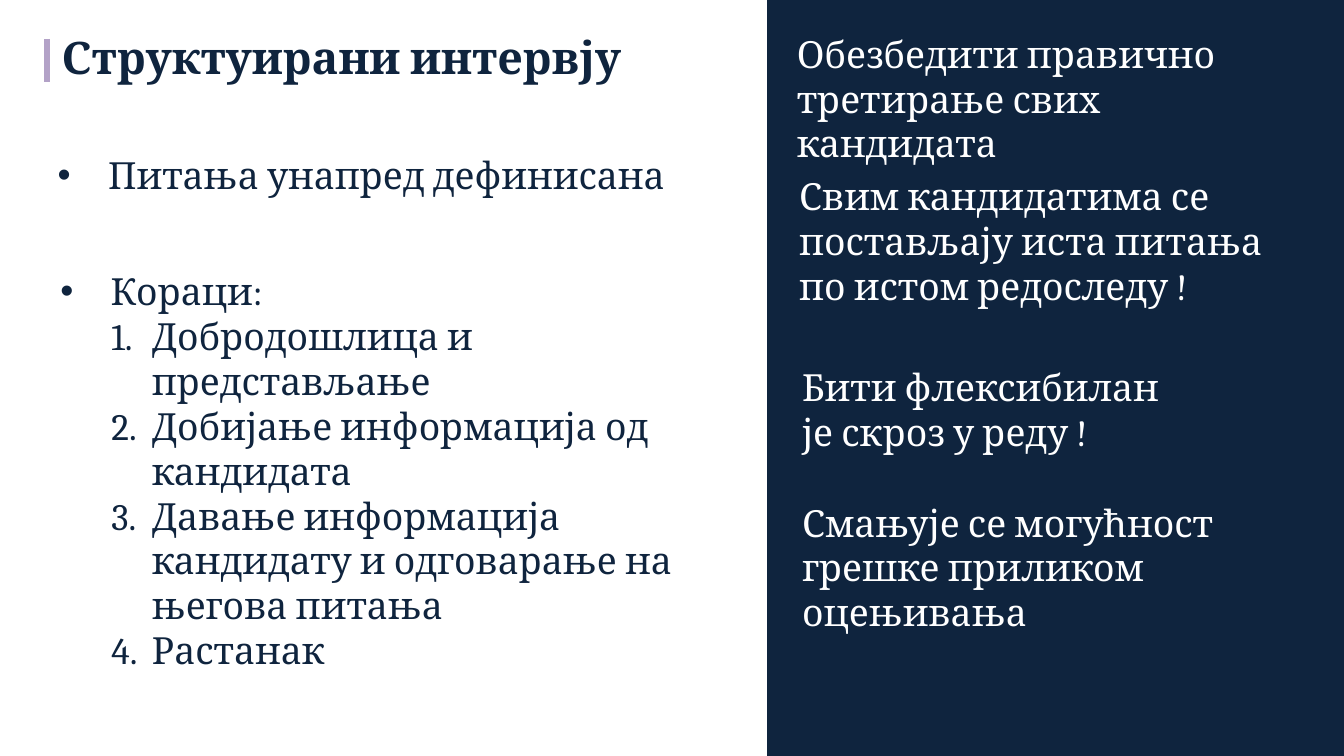
"""Build the slide on structured interviews."""
from lxml.etree import SubElement
from pptx import Presentation
from pptx.dml.color import RGBColor
from pptx.enum.shapes import MSO_CONNECTOR, MSO_SHAPE
from pptx.enum.text import MSO_ANCHOR, MSO_AUTO_SIZE
from pptx.oxml.ns import qn
from pptx.util import Pt

COLORS = {"navy": "0F243E", "white": "FFFFFF", "lilac": "B3A2C7"}
BODY = {"name": "Cambria", "size": Pt(20)}
TITLE = {"name": "Cambria", "size": Pt(24), "bold": True}
GROWING = {"word_wrap": True, "auto_size": MSO_AUTO_SIZE.SHAPE_TO_FIT_TEXT}
CENTRED = {"word_wrap": True, "vertical_anchor": MSO_ANCHOR.MIDDLE}


def add_text(place, lines, color, font=BODY, frame=GROWING):
    block = slide.shapes.add_textbox(*map(Pt, place)).text_frame
    for key, value in frame.items():
        setattr(block, key, value)
    block.text = "\n".join(lines)
    for paragraph in block.paragraphs:
        for run in paragraph.runs:
            for key, value in font.items():
                setattr(run.font, key, value)
            run.font.color.rgb = RGBColor.from_string(COLORS[color])
    return block.paragraphs


def add_marker(paragraph, margin, indent, tag, **attributes):
    properties = paragraph._p.get_or_add_pPr()
    properties.set("marL", str(Pt(margin)))
    properties.set("indent", str(Pt(-indent)))
    if tag == "a:buChar":
        SubElement(properties, qn("a:buFont"), typeface="Arial")
    SubElement(properties, qn(tag), **attributes)


deck = Presentation()
deck.slide_width, deck.slide_height = Pt(720), Pt(405)
slide = deck.slides.add_slide(deck.slide_layouts[6])

panel = slide.shapes.add_shape(MSO_SHAPE.RECTANGLE, Pt(411), Pt(0), Pt(309), Pt(405))
panel.shadow.inherit = False
panel.fill.solid()
panel.fill.fore_color.rgb = RGBColor.from_string(COLORS["navy"])
panel.line.fill.background()

accent = slide.shapes.add_connector(MSO_CONNECTOR.STRAIGHT, Pt(25.2), Pt(20.9), Pt(25.2), Pt(43.9))
accent.line.color.rgb = RGBColor.from_string(COLORS["lilac"])
accent.line.width = Pt(3)
SubElement(accent._element.spPr, qn("a:effectLst"))

add_text((26, 0, 612, 60.5), ["Структуирани интервју"], "navy", TITLE, CENTRED)

questions = add_text((23.8, 77.8, 387, 55.4), ["Питања унапред дефинисана"], "navy")
steps = add_text((25.2, 140.4, 368.6, 177), [
    "Кораци:",
    "Добродошлица и представљање",
    "Добијање информација од кандидата",
    "Давање информација кандидату и одговарање на његова питања",
    "Растанак",
], "navy")
for heading in (questions[0], steps[0]):
    add_marker(heading, 27, 27, "a:buChar", char="•")
for step in steps[1:]:
    step.level = 1
    add_marker(step, 49, 21.6, "a:buAutoNum", type="arabicPeriod")

benefits = [
    ((419.8, 13, 263.5, 80), "Обезбедити правично третирање свих кандидата"),
    ((421, 89.3, 274, 80), "Свим кандидатима се постављају иста питања по истом редоследу !"),
    ((422.6, 191.5, 218, 55.4), "Бити флексибилан је скроз у реду !"),
    ((422.6, 264.2, 245, 80), "Смањује се могућност грешке приликом оцењивања"),
]
for place, benefit in benefits:
    add_text(place, [benefit], "white")

deck.save("out.pptx")
